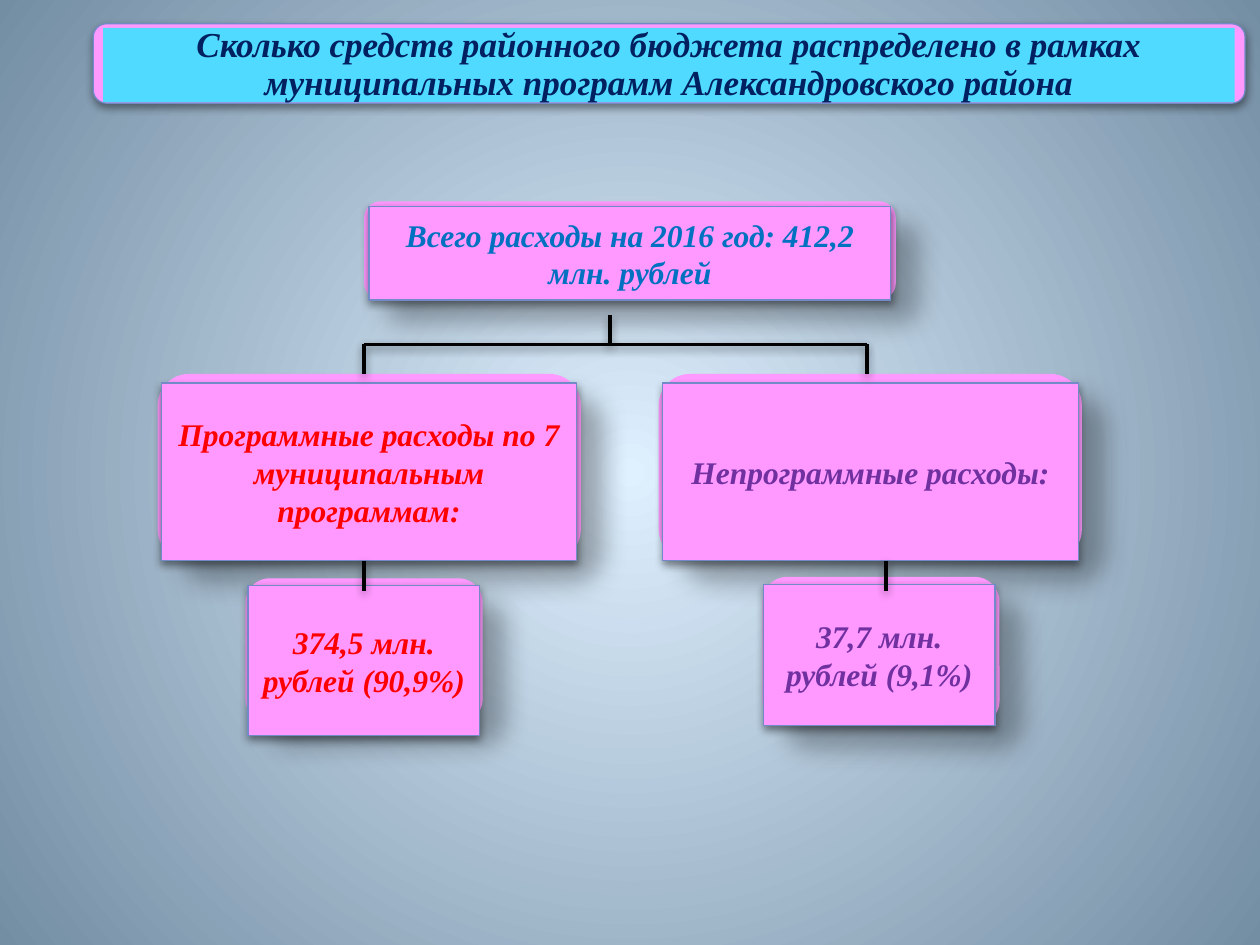
from lxml.etree import SubElement
from pptx import Presentation
from pptx.dml.color import RGBColor
from pptx.enum.shapes import MSO_CONNECTOR, MSO_SHAPE
from pptx.enum.text import MSO_ANCHOR, MSO_AUTO_SIZE, PP_ALIGN
from pptx.oxml.ns import qn
from pptx.util import Cm, Pt

TITLE = ("Сколько средств районного бюджета распределено в рамках "
         "муниципальных программ Александровского района")
PINK, CYAN, EDGE, BLACK = "FF99FF", "51DAFF", "738AC8", "000000"
RED, PURPLE, BLUE, NAVY = "FF0000", "7030A0", "0070C0", "002060"

# Shadows: opacity %, blur pt, distance pt, direction in degrees
SOFT = (30, 15, 18, 45)
TIGHT = (43, 5, 2, 90)

# Places in cm: left, top, width, height
TITLE_PLATE = (1.88, 0.48, 23.22, 1.6)
TITLE_BOX = (2.08, 0.56, 22.81, 1.5)

# Text, colour, back plate, front box
CARDS = [
    ("Всего расходы на 2016 год: 412,2 млн. рублей", BLUE,
     (7.34, 4.06, 10.72, 1.98), (7.44, 4.17, 10.52, 1.88)),
    ("Программные расходы по 7 муниципальным программам:", RED,
     (3.18, 7.54, 8.53, 3.76), (3.25, 7.72, 8.38, 3.58)),
    ("Непрограммные расходы:", PURPLE,
     (13.28, 7.54, 8.53, 3.76), (13.36, 7.72, 8.38, 3.58)),
    ("374,5 млн. рублей (90,9%)", RED,
     (4.95, 11.66, 4.78, 2.92), (5.0, 11.81, 4.67, 3.02)),
    ("37,7 млн. рублей (9,1%)", PURPLE,
     (15.37, 11.63, 4.78, 3.0), (15.39, 11.79, 4.67, 2.84)),
]

# Tree lines in cm
STEM_TOP, BUS_Y, DROP_END = 6.35, 6.94, 7.54
STEM_X, LEFT_X, RIGHT_X = 12.3, 7.34, 17.48
AMOUNT_X, AMOUNT_TOP, AMOUNT_END = (LEFT_X, 17.86), 11.3, 11.91


def color(hex_code):
    return RGBColor.from_string(hex_code)


def add_shadow(shape, opacity, blur, distance, direction):
    effects = SubElement(shape.element.spPr, qn("a:effectLst"))
    shadow = SubElement(effects, qn("a:outerShdw"), blurRad=str(Pt(blur)),
                        dist=str(Pt(distance)), dir=str(direction * 60000),
                        algn="ctr", rotWithShape="0")
    black = SubElement(shadow, qn("a:srgbClr"), val=BLACK)
    SubElement(black, qn("a:alpha"), val=str(opacity * 1000))


def add_box(slide, kind, place, line, shadow):
    shape = slide.shapes.add_shape(kind, *map(Cm, place))
    shape.fill.solid()
    shape.fill.fore_color.rgb = color(PINK)
    if line:
        shape.line.color.rgb = color(line)
        shape.line.width = Pt(0.75)
    else:
        shape.line.fill.background()
    add_shadow(shape, *shadow)
    return shape


def write(shape, text, size, hex_code):
    frame = shape.text_frame
    frame.word_wrap = True
    frame.auto_size = MSO_AUTO_SIZE.NONE
    frame.vertical_anchor = MSO_ANCHOR.MIDDLE
    frame.margin_left = frame.margin_right = Cm(0.25)
    frame.margin_top = frame.margin_bottom = Cm(0.25)
    frame.text = text
    paragraph = frame.paragraphs[0]
    paragraph.alignment = PP_ALIGN.CENTER
    font = paragraph.font
    font.name, font.size = "Times New Roman", Pt(size)
    font.bold = font.italic = True
    font.color.rgb = color(hex_code)
    return paragraph


def add_line(slide, *ends):
    line = slide.shapes.add_connector(MSO_CONNECTOR.STRAIGHT, *map(Cm, ends))
    line.line.color.rgb = color(BLACK)
    line.line.width = Pt(2)
    add_shadow(line, *TIGHT)


def paint_background(slide):
    """Radial gradient, light in the centre."""
    fill = slide.background.fill
    fill.gradient()
    for stop, position, shade in zip(fill.gradient_stops, (0, 1), ("DFF0FF", "738DA3")):
        stop.position = position
        stop.color.rgb = color(shade)
    gradient = slide.element.find(".//" + qn("a:gradFill"))
    gradient.remove(gradient.find(qn("a:lin")))
    circle = SubElement(gradient, qn("a:path"), path="circle")
    SubElement(circle, qn("a:fillToRect"), l="50000", t="50000", r="50000", b="50000")


def add_title(slide):
    add_box(slide, MSO_SHAPE.ROUNDED_RECTANGLE, TITLE_PLATE, EDGE, TIGHT)
    title = slide.shapes.title
    title.element.getparent().append(title.element)  # in front of its plate
    title.left, title.top, title.width, title.height = map(Cm, TITLE_BOX)
    title.fill.solid()
    title.fill.fore_color.rgb = color(CYAN)
    write(title, TITLE, 20, NAVY).line_spacing = 0.9


def main():
    presentation = Presentation()
    presentation.slide_width, presentation.slide_height = Cm(25.4), Cm(19.05)
    slide = presentation.slides.add_slide(presentation.slide_layouts[5])
    paint_background(slide)
    add_title(slide)
    for text, text_color, plate, box in CARDS:
        add_box(slide, MSO_SHAPE.ROUNDED_RECTANGLE, plate, None, SOFT)
        front = add_box(slide, MSO_SHAPE.RECTANGLE, box, EDGE, TIGHT)
        write(front, text, 18, text_color)

    add_line(slide, STEM_X, STEM_TOP, STEM_X, BUS_Y)
    for x in (LEFT_X, RIGHT_X):
        add_line(slide, STEM_X, BUS_Y, x, BUS_Y)
        add_line(slide, x, BUS_Y, x, DROP_END)
    for x in AMOUNT_X:
        add_line(slide, x, AMOUNT_TOP, x, AMOUNT_END)
    presentation.save("out.pptx")


if __name__ == "__main__":
    main()
